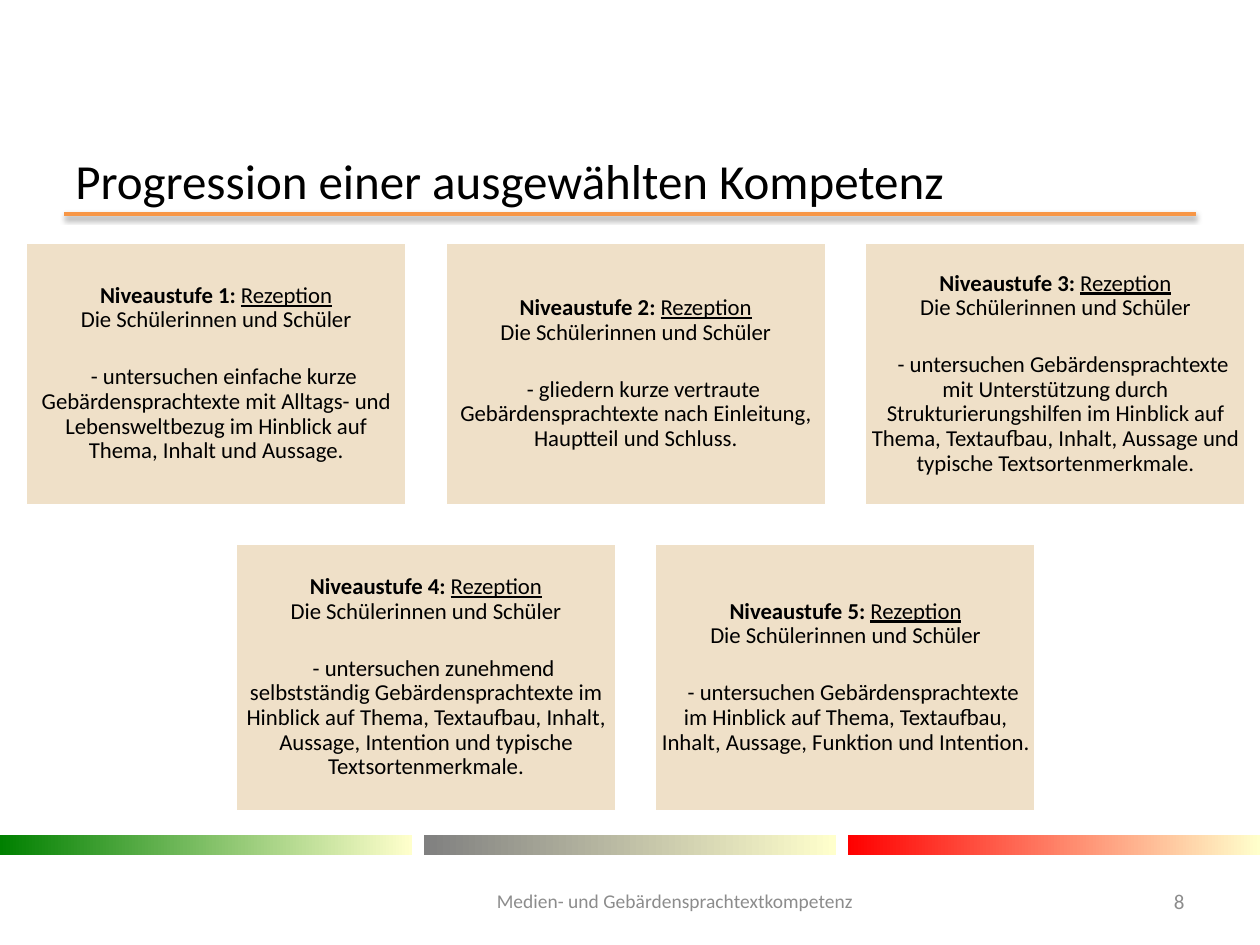
from lxml import etree
from pptx import Presentation
from pptx.dml.color import RGBColor
from pptx.enum.shapes import MSO_CONNECTOR, MSO_SHAPE
from pptx.enum.text import MSO_ANCHOR, PP_ALIGN
from pptx.oxml.ns import qn
from pptx.util import Pt

RECTANGLE = MSO_SHAPE.RECTANGLE
STRAIGHT = MSO_CONNECTOR.STRAIGHT
MIDDLE = MSO_ANCHOR.MIDDLE
LEFT, CENTER, RIGHT = PP_ALIGN.LEFT, PP_ALIGN.CENTER, PP_ALIGN.RIGHT

FONT = "Calibri"
BLACK, WHITE, GREY = "000000", "FFFFFF", "8C8C8C"
BEIGE, ORANGE, CREAM = "EFE0C8", "F79646", "FFFFCC"
STRIPE_COLORS = ["008000", "808080", "FF0000"]
LEVEL_WIDTH, LEVEL_GAP = 218, 21.8

COMPETENCES = [
    "untersuchen einfache kurze Gebärdensprachtexte mit Alltags- und "
    "Lebensweltbezug im Hinblick auf Thema, Inhalt und Aussage.",
    "gliedern kurze vertraute Gebärdensprachtexte nach Einleitung, "
    "Hauptteil und Schluss.",
    "untersuchen Gebärdensprachtexte mit Unterstützung durch "
    "Strukturierungshilfen im Hinblick auf Thema, Textaufbau, Inhalt, "
    "Aussage und typische Textsortenmerkmale.",
    "untersuchen zunehmend selbstständig Gebärdensprachtexte im Hinblick "
    "auf Thema, Textaufbau, Inhalt, Aussage, Intention und typische "
    "Textsortenmerkmale.",
    "untersuchen Gebärdensprachtexte im Hinblick auf Thema, Textaufbau, "
    "Inhalt, Aussage, Funktion und Intention.",
]


def paint(color_format, hex_color):
    color_format.rgb = RGBColor.from_string(hex_color)


def style(paragraph, size, color, align):
    paragraph.alignment = align
    paragraph.font.name = FONT
    paragraph.font.size = Pt(size)
    paint(paragraph.font.color, color)


def add_label(slide, left, top, width, height, text, size, color, align):
    label = slide.shapes.add_textbox(Pt(left), Pt(top), Pt(width), Pt(height))
    frame = label.text_frame
    frame.word_wrap = True
    frame.vertical_anchor = MIDDLE
    frame.text = text
    style(frame.paragraphs[0], size, color, align)


def add_heading(slide, left, top, width, height):
    add_label(slide, left, top, width, height,
              "Progression einer ausgewählten Kompetenz", 28, BLACK, LEFT)
    rule_y = top + height + 5.8
    rule = slide.shapes.add_connector(
        STRAIGHT, Pt(left + 0.7), Pt(rule_y), Pt(left + width - 0.7), Pt(rule_y))
    rule.line.width = Pt(2)
    paint(rule.line.color, ORANGE)
    effects = etree.SubElement(rule._element.spPr, qn("a:effectLst"))
    shadow = etree.SubElement(effects, qn("a:outerShdw"), blurRad=str(Pt(3.1)),
                              dist=str(Pt(1.6)), dir="5400000", rotWithShape="0")
    shade = etree.SubElement(shadow, qn("a:srgbClr"), val=BLACK)
    etree.SubElement(shade, qn("a:alpha"), val="38000")


def add_level(slide, left, top, width, height, number, competence):
    card = slide.shapes.add_shape(RECTANGLE, Pt(left), Pt(top), Pt(width), Pt(height))
    card.shadow.inherit = False
    card.fill.solid()
    paint(card.fill.fore_color, BEIGE)
    card.line.width = Pt(2)
    paint(card.line.color, WHITE)
    frame = card.text_frame
    frame.word_wrap = True
    frame.vertical_anchor = MIDDLE
    frame.margin_left = frame.margin_right = Pt(3.6)
    frame.margin_top = frame.margin_bottom = Pt(3.6)

    heading = frame.paragraphs[0]
    level = heading.add_run()
    level.text = f"Niveaustufe {number}: "
    level.font.bold = True
    skill = heading.add_run()
    skill.text = "Rezeption"
    skill.font.underline = True
    subject = frame.add_paragraph()
    subject.text = "Die Schülerinnen und Schüler"
    goal = frame.add_paragraph()
    goal.text = f"- {competence}"
    goal.space_before = Pt(18.5)
    goal._p.get_or_add_pPr().set("indent", str(Pt(8.8)))
    for paragraph in frame.paragraphs:
        style(paragraph, 13, BLACK, CENTER)
        paragraph.line_spacing = 0.9


def add_level_row(slide, left, top, width, height, first_number, competences):
    pitch = LEVEL_WIDTH + LEVEL_GAP
    row_width = len(competences) * pitch - LEVEL_GAP
    start = left + (width - row_width) / 2
    for index, competence in enumerate(competences):
        add_level(slide, start + index * pitch, top, LEVEL_WIDTH, height,
                  first_number + index, competence)


def add_stripes(slide, left, top, width, height):
    stripe_width = 235.4
    pitch = (width - stripe_width) / (len(STRIPE_COLORS) - 1)
    for index, color in enumerate(STRIPE_COLORS):
        stripe = slide.shapes.add_shape(
            RECTANGLE, Pt(left + index * pitch), Pt(top), Pt(stripe_width), Pt(height))
        stripe.shadow.inherit = False
        stripe.line.fill.background()
        stripe.fill.gradient()
        stripe.fill.gradient_angle = 0
        for stop, stop_color in zip(stripe.fill.gradient_stops, (color, CREAM)):
            paint(stop.color, stop_color)


def add_footer(slide, left, top, width, height):
    add_label(slide, left, top, 232.6, height,
              "Medien- und Gebärdensprachtextkompetenz", 11.1, GREY, CENTER)
    add_label(slide, left + width - 46, top, 46, height, "8", 12, GREY, RIGHT)


def main():
    deck = Presentation()
    deck.slide_width, deck.slide_height = Pt(720), Pt(540)
    slide = deck.slides.add_slide(deck.slide_layouts[6])
    add_heading(slide, 36, 88.6, 648, 28)
    add_level_row(slide, 14.4, 138.3, 697.6, 150.5, 1, COMPETENCES[:3])
    add_level_row(slide, 14.4, 310.3, 697.6, 153.4, 4, COMPETENCES[3:])
    add_stripes(slide, 0, 477.2, 720, 11.5)
    add_footer(slide, 269.3, 500.4, 414.7, 28.8)
    deck.save("out.pptx")


if __name__ == "__main__":
    main()
